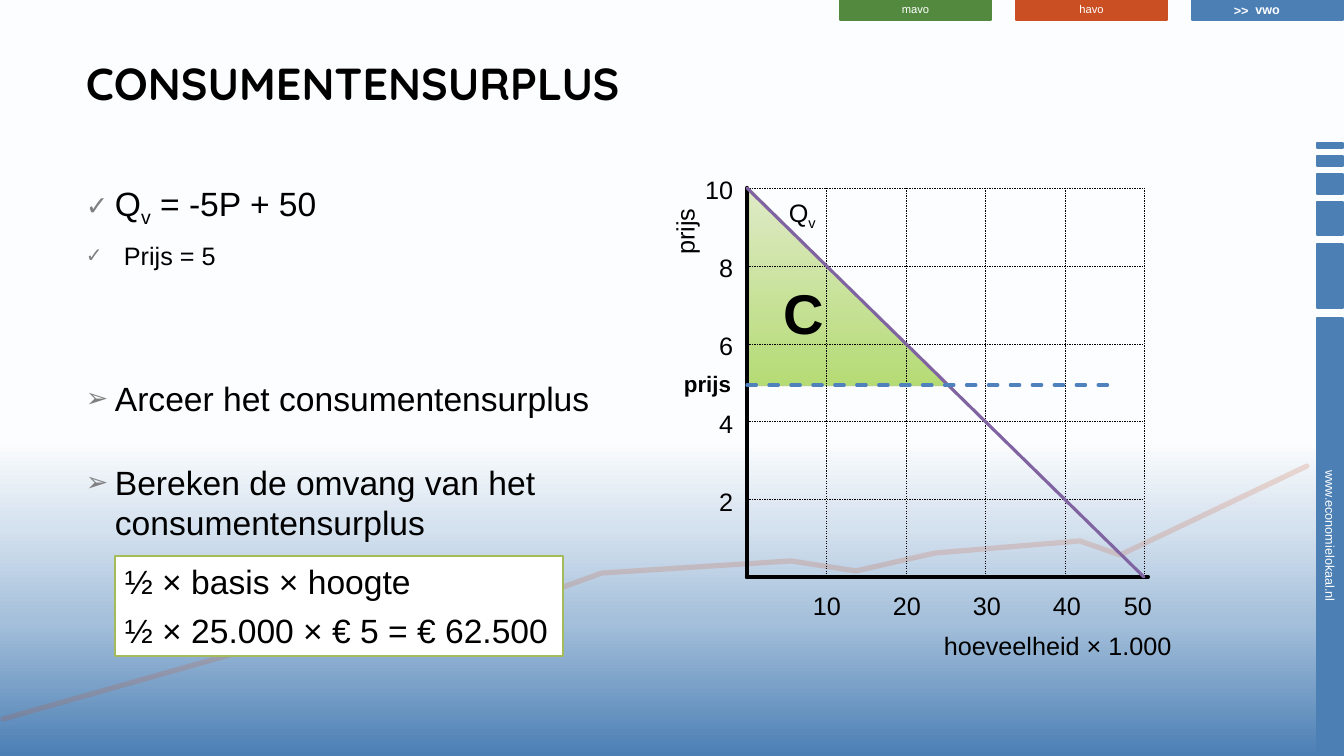
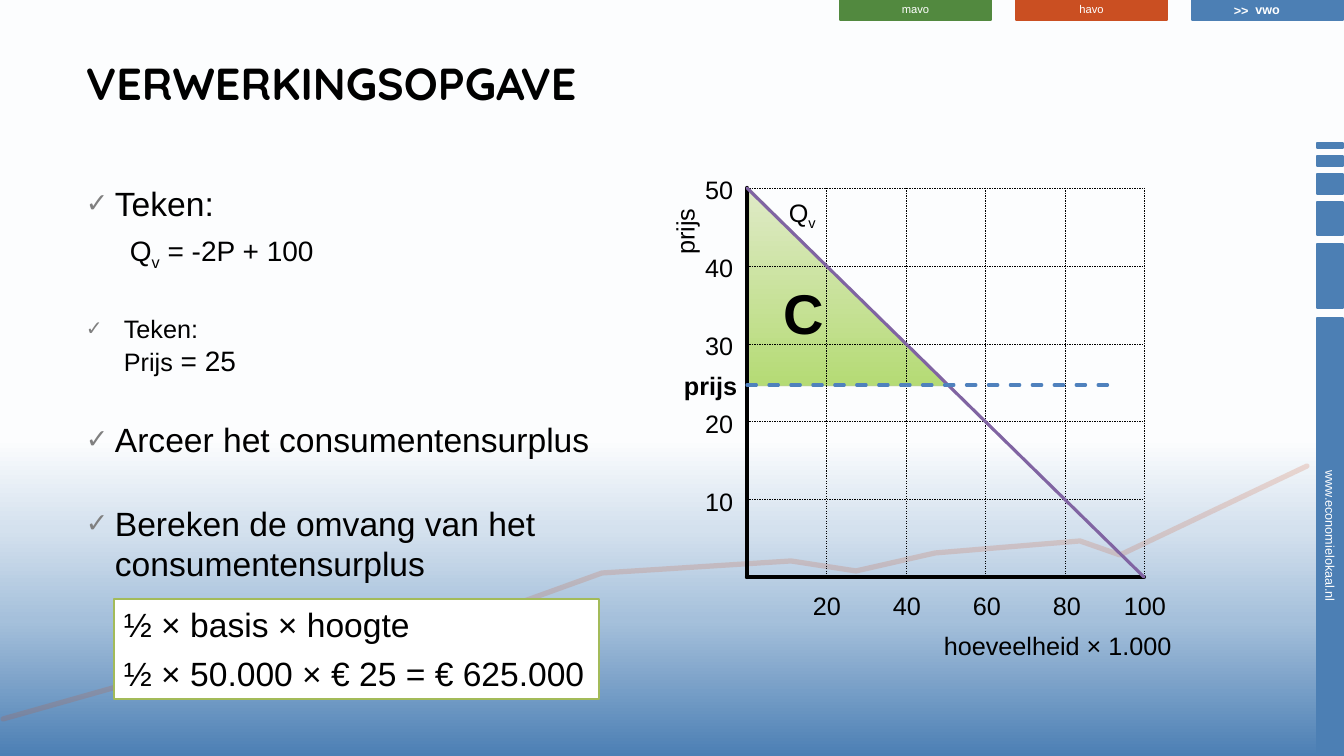
"""Build two slides on consumer surplus, each with a worked task and a demand graph."""
import pptx
import pptx.util
import pptx.dml.color
import pptx.enum.dml
import pptx.enum.shapes
import pptx.enum.text
import pptx.oxml.ns
import lxml.etree

SCALE = 914400 / 100.8
HUES = {
    "ink": "000000", "white": "FFFFFF", "blue": "4C7FB4", "red": "CA4F22",
    "green": "52893F", "olive": "A3BB59", "rim": "BECE99", "pale": "DFEAC7",
    "lime": "B5DB75", "plum": "8064A2", "price": "4F81BD", "grey": "808080",
}
HUE = {name: pptx.dml.color.RGBColor.from_string(code) for name, code in HUES.items()}
SKY = [(0, "4C7FB4"), (18, "A5C0DB"), (30, "D4E1EE"), (42, "FCFDFE"), (50, "FFFFFF")]
TREND = [(1307, 466), (1120, 555), (1080, 541), (935, 553), (856, 571), (791, 561),
         (602, 573), (505, 608), (360, 620), (272, 643), (3, 719)]
BARS = [(143, 5), (156, 10), (174, 20), (202, 33), (244, 64)]
TABS = [("vwo", "blue", 9, True), ("havo", "red", 8, False), ("mavo", "green", 8, False)]
LEFT, TOP, WIDE, HIGH, STEPS = 747, 188, 397, 389, 5
BASE = TOP + HIGH
qn = pptx.oxml.ns.qn
Pt = pptx.util.Pt
ALIGN = pptx.enum.text.PP_ALIGN
SHAPE = pptx.enum.shapes.MSO_SHAPE
MIDDLE = pptx.enum.text.MSO_ANCHOR.MIDDLE

TASKS = [
    {
        "title": "CONSUMENTENSURPLUS",
        "body": [
            ("✓", 29, 29, 0, [("Q", 24), ("v", 24, -25), (" = -5P + 50", 24)]),
            ("✓", 38, 38, 8, [("Prijs = 5", 18)]),
            ("➢", 29, 29, 77, [("Arceer het consumentensurplus", 24)]),
            ("➢", 29, 29, 31, [("Bereken de omvang van het consumentensurplus", 24)]),
        ],
        "rise": 2, "run": 10, "last": 1138, "edge": 1148, "depth": 198,
        "price": (16, 69, 37),
        "answer": (115, 556, 448, 100), "sum": "½ × 25.000 × € 5 = € 62.500",
    },
    {
        "title": "VERWERKINGSOPGAVE",
        "body": [
            ("✓", 29, 29, 0, [("Teken:", 24)]),
            (None, 44, 0, 7, [("Q", 20), ("v", 20, -25), (" = -2P + 100", 20)]),
            ("✓", 38, 38, 30, [("Teken:", 18), ("\v", 18), ("Prijs", 18), (" = 25", 20)]),
            ("✓", 29, 29, 30, [("Arceer het consumentensurplus", 24)]),
            ("✓", 29, 29, 31, [("Bereken de omvang van het consumentensurplus", 24)]),
        ],
        "rise": 10, "run": 20, "last": 1145, "edge": 1144, "depth": 198,
        "price": (18, 74, 40),
        "answer": (114, 599, 485, 100), "sum": "½ × 50.000 × € 25 = € 625.000",
    },
]


def put(slide, place, fill=None, line=None, kind=SHAPE.RECTANGLE):
    """Add a text box, or a shape when a line is named."""
    spot = [round(n * SCALE) for n in place]
    if line is None:
        item = slide.shapes.add_textbox(*spot)
    else:
        item = slide.shapes.add_shape(kind, *spot)
        item.shadow.inherit = False
        item.line.color.rgb = HUE[line]
        item.line.width = Pt(1.25)
        if fill:
            item.fill.solid()
            item.fill.fore_color.rgb = HUE[fill]
    item.text_frame.word_wrap = False
    return item


def type_in(par, parts, tint="ink", bold=False, face="Arial", align=ALIGN.LEFT):
    """Fill a paragraph with (text, size, shift) parts."""
    par.alignment = align
    for text, size, *shift in parts:
        if text == "\v":
            par.add_line_break()
            continue
        run = par.add_run()
        run.text = text
        run.font.size = Pt(size)
        run.font.name = face
        run.font.bold = bold
        run.font.color.rgb = HUE[tint]
        if shift:
            run._r.get_or_add_rPr().set("baseline", str(shift[0] * 1000))


deck = pptx.Presentation()
deck.slide_width = round(1344 * SCALE)
deck.slide_height = round(756 * SCALE)

master = deck.slide_master
ground = master.background.fill
ground.gradient()
ground.gradient_angle = 90
stops = master._element.find(".//" + qn("p:bg")).find(".//" + qn("a:gsLst"))
for old in list(stops):
    stops.remove(old)
for pos, code in SKY:
    stop = lxml.etree.SubElement(stops, qn("a:gs"), pos=str(pos * 1000))
    lxml.etree.SubElement(stop, qn("a:srgbClr"), val=code)

for task in TASKS:
    slide = deck.slides.add_slide(deck.slide_layouts[6])

    banner = put(slide, (1112, 523, 436, 26), "blue", "blue")
    banner.rotation = 90
    marks = [(banner, "www.economielokaal.nl", 9, False)]
    for i, (word, hue, size, bold) in enumerate(TABS):
        tab = put(slide, (1192 - 176 * i, 0, 151, 20), hue, hue)
        marks.append((tab, word, size, bold))
    for item, word, size, bold in marks:
        frame = item.text_frame
        frame.vertical_anchor = MIDDLE
        frame.margin_top = 0
        frame.margin_bottom = round(SCALE)
        type_in(frame.paragraphs[0], [(word, size)], "white", bold, align=ALIGN.CENTER)
    for top, tall in BARS:
        put(slide, (1317, top, 26, tall), "blue", "blue")

    pen = slide.shapes.build_freeform(*TREND[0], scale=SCALE)
    pen.add_line_segments(TREND[1:], close=False)
    trend = pen.convert_to_shape()
    trend.shadow.inherit = False
    trend.fill.background()
    trend.line.color.rgb = HUE["red"]
    trend.line.width = Pt(3.75)
    trend.line._ln.set("cap", "rnd")

    arrows = put(slide, (1224, -2, 35, 25))
    type_in(arrows.text_frame.paragraphs[0], [(">>", 9)], "white", True)

    area = put(slide, (749, TOP, 198, task["depth"]), None, "rim", SHAPE.RIGHT_TRIANGLE)
    area.line.width = Pt(0.75)
    area.fill.gradient()
    area.fill.gradient_angle = 270
    for stop, pos, hue in zip(area.fill.gradient_stops, (0, 1), ("pale", "lime")):
        stop.position = pos
        stop.color.rgb = HUE[hue]
    for item, share in ((trend, 19), (area, 60)):
        tone = item.line._ln.find(".//" + qn("a:srgbClr"))
        lxml.etree.SubElement(tone, qn("a:alpha"), val=str(share * 1000))

    title = put(slide, (76, 51, 1010, 90))
    title.text_frame.word_wrap = True
    type_in(title.text_frame.paragraphs[0], [(task["title"], 32)], bold=True, face="Quicksand")

    body = put(slide, (76, 178, 544, 519)).text_frame
    body.word_wrap = True
    for i, (sign, inset, hang, gap, parts) in enumerate(task["body"]):
        par = body.add_paragraph() if i else body.paragraphs[0]
        if gap:
            par.space_before = Pt(gap)
        props = par._p.get_or_add_pPr()
        props.set("marL", str(round(inset * SCALE)))
        props.set("indent", str(round(-hang * SCALE)))
        if sign:
            tone = lxml.etree.SubElement(props, qn("a:buClr"))
            lxml.etree.SubElement(tone, qn("a:srgbClr"), val=HUES["grey"])
            lxml.etree.SubElement(props, qn("a:buSzPct"), val="80000")
            lxml.etree.SubElement(props, qn("a:buFont"), typeface="Arial")
            lxml.etree.SubElement(props, qn("a:buChar"), char=sign)
        type_in(par, parts)

    lines = [(LEFT, TOP, LEFT, BASE, "ink", 3, False),
             (task["edge"], BASE, LEFT, BASE, "ink", 3, False)]
    for i in range(STEPS):
        y = TOP + round(HIGH * i / STEPS)
        x = LEFT + round(WIDE * (i + 1) / STEPS)
        lines.append((LEFT, y, LEFT + WIDE, y, "ink", 0.25, True))
        lines.append((x, TOP, x, BASE, "ink", 0.25, True))
    lines.append((LEFT, TOP, LEFT + WIDE, BASE, "plum", 2.25, False))
    lines.append((LEFT, 385, 1111, 385, "price", 2.25, True))
    for *ends, hue, width, dash in lines:
        line = slide.shapes.add_connector(
            pptx.enum.shapes.MSO_CONNECTOR.STRAIGHT, *[round(n * SCALE) for n in ends])
        line.line.color.rgb = HUE[hue]
        line.line.width = Pt(width)
        if dash:
            line.line.dash_style = pptx.enum.dml.MSO_LINE.DASH
        if width > 1:
            line.line._ln.set("cap", "rnd")
        lxml.etree.SubElement(line._element.spPr, qn("a:effectLst"))

    size, wide, tall = task["price"]
    notes = [
        ((934, 625, 250, 40), [("hoeveelheid × 1.000", 18)], False, ALIGN.LEFT, 0),
        ((651, 211, 67, 40), [("prijs", 18)], False, ALIGN.LEFT, 270),
        ((779, 192, 48, 40), [("Q", 18), ("v", 18, -25)], False, ALIGN.LEFT, 0),
        ((674, 365, wide, tall), [("prijs", size)], True, ALIGN.LEFT, 0),
        ((774, 274, 61, 78), [("C", 40)], True, ALIGN.LEFT, 0),
    ]
    for i in range(STEPS):
        rise = str(task["rise"] * (STEPS - i))
        run = str(task["run"] * (i + 1))
        mid = task["last"] if i == STEPS - 1 else 827 + 80 * i
        notes.append(((694, 169 + 78 * i, 49, 40), [(rise, 18)], False, ALIGN.RIGHT, 0))
        notes.append(((mid - 31, 585, 62, 40), [(run, 18)], False, ALIGN.CENTER, 0))
    for place, parts, bold, align, turn in notes:
        note = put(slide, place)
        note.rotation = turn
        type_in(note.text_frame.paragraphs[0], parts, bold=bold, align=align)

    answer = put(slide, task["answer"], "white", "olive").text_frame
    answer.vertical_anchor = pptx.enum.text.MSO_ANCHOR.TOP
    type_in(answer.paragraphs[0], [("½ × basis × hoogte", 24)])
    answer.paragraphs[0].space_after = Pt(6)
    type_in(answer.add_paragraph(), [(task["sum"], 24)])

deck.save("out.pptx")
